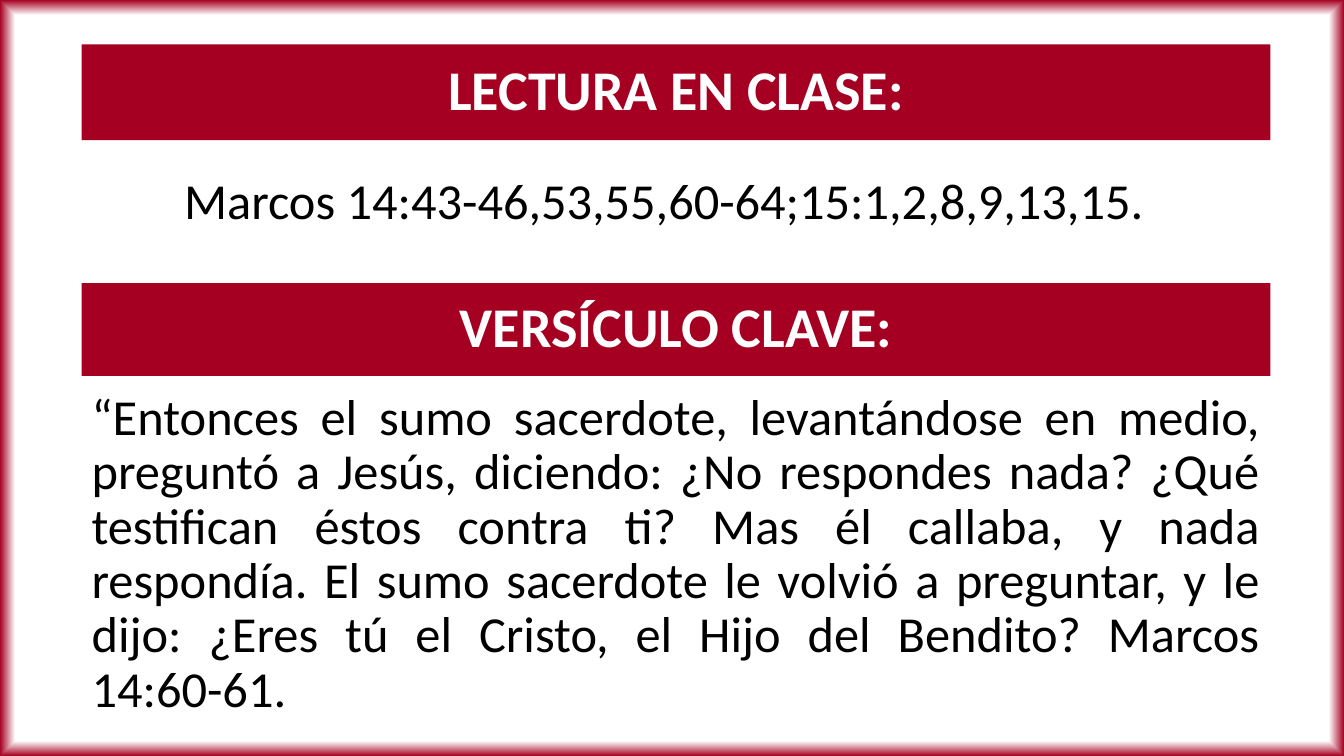
import pptx
import pptx.dml.color
import pptx.enum.text
import pptx.oxml
import pptx.oxml.ns
import pptx.util

WIDTH, HEIGHT = 13.33, 7.5
LEFT, COLUMN = 0.81, 11.79
RED, WHITE, BLACK = "A50021", "FFFFFF", "000000"
ALIGN = pptx.enum.text.PP_ALIGN

HEADING = {"size": pptx.util.Pt(40), "bold": True}
READING = {"size": pptx.util.Pt(36), "bold": False}

VERSE = (
    "“Entonces el sumo sacerdote, levantándose en medio, preguntó a Jesús, "
    "diciendo: ¿No respondes nada? ¿Qué testifican éstos contra ti? Mas él "
    "callaba, y nada respondía. El sumo sacerdote le volvió a preguntar, y le "
    "dijo: ¿Eres tú el Cristo, el Hijo del Bendito? Marcos 14:60-61."
)


def color(value):
    return pptx.dml.color.RGBColor.from_string(value)


def paint_background(page):
    """White page with a red glow along the four edges."""
    fill = page.background.fill
    fill.gradient()
    gradient = page.background._cSld.find(".//" + pptx.oxml.ns.qn("a:gradFill"))
    for child in list(gradient):
        gradient.remove(child)
    stops = "".join(
        f'<a:gs pos="{share * 1000}"><a:srgbClr val="{value}"/></a:gs>'
        for share, value in [(0, RED), (0, WHITE), (96, WHITE), (100, RED)]
    )
    namespace = pptx.oxml.ns.nsdecls("a")
    for part in (
        f"<a:gsLst {namespace}>{stops}</a:gsLst>",
        f'<a:path {namespace} path="shape"><a:fillToRect '
        'l="50000" t="50000" r="50000" b="50000"/></a:path>',
    ):
        gradient.append(pptx.oxml.parse_xml(part))


def place(box, top, height):
    places = {"left": LEFT, "top": top, "width": COLUMN, "height": height}
    for name, value in places.items():
        setattr(box, name, pptx.util.Inches(value))


def write(box, text, style, ink, alignment):
    frame = box.text_frame
    frame_format = {
        "word_wrap": True,
        "auto_size": pptx.enum.text.MSO_AUTO_SIZE.NONE,
        "vertical_anchor": pptx.enum.text.MSO_ANCHOR.MIDDLE,
    }
    for name, value in frame_format.items():
        setattr(frame, name, value)
    para = frame.paragraphs[0]
    para_format = {
        "alignment": alignment,
        "line_spacing": 0.9,
        "space_before": pptx.util.Pt(10),
    }
    for name, value in para_format.items():
        setattr(para, name, value)
    span = para.add_run()
    span.text = text
    for name, value in {"name": "Calibri", **style}.items():
        setattr(span.font, name, value)
    span.font.color.rgb = color(ink)


def add_heading(box, text, top, height):
    """Red bar with a bold white heading."""
    place(box, top, height)
    box.fill.solid()
    box.fill.fore_color.rgb = color(RED)
    write(box, text, HEADING, WHITE, ALIGN.CENTER)


def add_reading(box, text, top, height, alignment):
    """Plain black passage."""
    place(box, top, height)
    write(box, text, READING, BLACK, alignment)


def build_lesson(page):
    paint_background(page)
    add_heading(page.shapes.title, "LECTURA EN CLASE:", 0.44, 0.95)

    passage, key_heading, verse = (
        page.shapes.add_textbox(0, 0, 0, 0) for _ in range(3)
    )
    add_reading(passage, "Marcos 14:43-46,53,55,60-64;15:1,2,8,9,13,15.",
                1.58, 0.87, ALIGN.CENTER)
    # The passage sits slightly left of the centre line
    passage.text_frame.margin_right = pptx.util.Inches(0.33)
    add_heading(key_heading, "VERSÍCULO CLAVE:", 2.81, 0.92)
    add_reading(verse, VERSE, 3.93, 3.15, ALIGN.JUSTIFY)


def main():
    deck = pptx.Presentation()
    deck.slide_width = pptx.util.Inches(WIDTH)
    deck.slide_height = pptx.util.Inches(HEIGHT)
    title_only = deck.slide_layouts[5]
    build_lesson(deck.slides.add_slide(title_only))
    deck.save("out.pptx")


if __name__ == "__main__":
    main()
